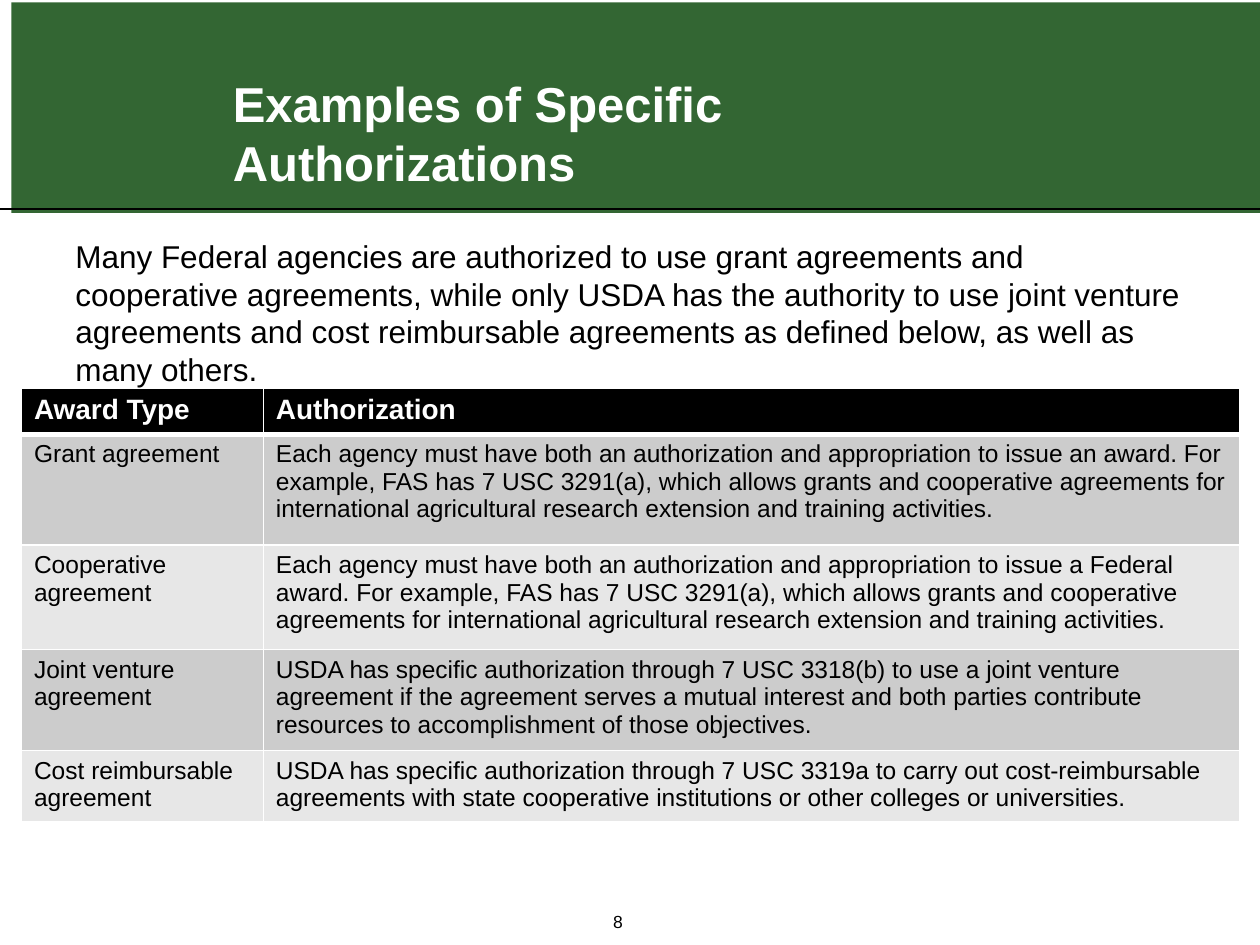
from lxml.etree import SubElement
from pptx import Presentation
from pptx.dml.color import RGBColor
from pptx.enum.shapes import MSO_CONNECTOR as Connector, MSO_SHAPE as Shape
from pptx.enum.text import MSO_ANCHOR as Anchor, PP_ALIGN as Align
from pptx.oxml.ns import qn
from pptx.util import Inches, Pt

GREEN = RGBColor(0x33, 0x66, 0x33)
BLACK = RGBColor(0x00, 0x00, 0x00)
WHITE = RGBColor(0xFF, 0xFF, 0xFF)
DARK_BAND = RGBColor(0xCC, 0xCC, 0xCC)
LIGHT_BAND = RGBColor(0xE7, 0xE7, 0xE7)

TITLE_LINES = ["Examples of Specific", "Authorizations"]
INTRO = (
    "Many Federal agencies are authorized to use grant agreements and cooperative "
    "agreements, while only USDA has the authority to use joint venture agreements "
    "and cost reimbursable agreements as defined below, as well as many others."
)
PAGE_NUMBER = "8"
AWARDS = [
    ("Award Type", "Authorization"),
    ("Grant agreement",
     "Each agency must have both an authorization and appropriation to issue an "
     "award. For example, FAS has 7 USC 3291(a), which allows grants and cooperative "
     "agreements for international agricultural research extension and training "
     "activities."),
    ("Cooperative agreement",
     "Each agency must have both an authorization and appropriation to issue a "
     "Federal award. For example, FAS has 7 USC 3291(a), which allows grants and "
     "cooperative agreements for international agricultural research extension and "
     "training activities."),
    ("Joint venture agreement",
     "USDA has specific authorization through 7 USC 3318(b) to use a joint venture "
     "agreement if the agreement serves a mutual interest and both parties contribute "
     "resources to accomplishment of those objectives."),
    ("Cost reimbursable agreement",
     "USDA has specific authorization through 7 USC 3319a to carry out "
     "cost-reimbursable agreements with state cooperative institutions or other "
     "colleges or universities."),
]
COLUMN_WIDTHS = [1.92, 7.75]
# Minimum heights: rows grow to fit their text
ROW_HEIGHTS = [0.17, 0.88, 0.83, 0.32, 0.53]


def write(para, lines, size, color, bold=False):
    for index, line in enumerate(lines):
        if index:
            para.add_line_break()
        span = para.add_run()
        span.text = line
        span.font.name = "Arial"
        span.font.size = Pt(size)
        span.font.bold = bold
        span.font.color.rgb = color


def add_text(page, place, lines, size, color, bold=False, anchor=Anchor.TOP,
             align=Align.LEFT):
    box = page.shapes.add_textbox(*map(Inches, place))
    frame = box.text_frame
    frame.word_wrap = True
    frame.vertical_anchor = anchor
    para = frame.paragraphs[0]
    para.alignment = align
    write(para, lines, size, color, bold)


def set_borders(cell, bottom_width):
    """Draw white borders; they must come before the fill in the cell's XML."""
    properties = cell._tc.get_or_add_tcPr()
    for side, width in (("L", 1), ("R", 1), ("T", 1), ("B", bottom_width)):
        line = SubElement(properties, qn(f"a:ln{side}"), w=str(Pt(width)))
        fill = SubElement(line, qn("a:solidFill"))
        SubElement(fill, qn("a:srgbClr"), val=str(WHITE))


def add_banner(page):
    banner = page.shapes.add_shape(
        Shape.RECTANGLE, Inches(0.09), Inches(0.02), Inches(10), Inches(1.67))
    banner.shadow.inherit = False
    banner.fill.solid()
    banner.fill.fore_color.rgb = GREEN
    banner.line.fill.background()
    rule = page.shapes.add_connector(
        Connector.STRAIGHT, 0, Inches(1.66), Inches(10), Inches(1.66))
    rule.line.color.rgb = BLACK
    rule.line.width = Pt(0.75)
    SubElement(rule._element.spPr, qn("a:effectLst"))


def add_awards_table(page):
    table = page.shapes.add_table(
        len(AWARDS), len(COLUMN_WIDTHS), Inches(0.17), Inches(3.08),
        Inches(sum(COLUMN_WIDTHS)), Inches(sum(ROW_HEIGHTS))).table
    for column, width in zip(table.columns, COLUMN_WIDTHS):
        column.width = Inches(width)
    for index, (row, height, texts) in enumerate(zip(table.rows, ROW_HEIGHTS, AWARDS)):
        row.height = Inches(height)
        header = index == 0
        band = BLACK if header else DARK_BAND if index % 2 else LIGHT_BAND
        for cell, text in zip(row.cells, texts):
            set_borders(cell, 3 if header else 1)
            cell.fill.solid()
            cell.fill.fore_color.rgb = band
            write(cell.text_frame.paragraphs[0], [text], 16 if header else 14,
                  WHITE if header else BLACK, header)


def main():
    deck = Presentation()
    deck.slide_width, deck.slide_height = Inches(10), Inches(7.5)
    page = deck.slides.add_slide(deck.slide_layouts[6])
    add_banner(page)
    add_text(page, (1.75, 0.36, 6.53, 1.21), TITLE_LINES, 28, WHITE, bold=True,
             anchor=Anchor.BOTTOM)
    add_awards_table(page)
    add_text(page, (0.5, 1.83, 9, 4.95), [INTRO], 18, BLACK)
    add_text(page, (3.98, 7.28, 1.85, 0.17), [PAGE_NUMBER], 10, BLACK,
             anchor=Anchor.BOTTOM, align=Align.CENTER)
    deck.save("out.pptx")


if __name__ == "__main__":
    main()
